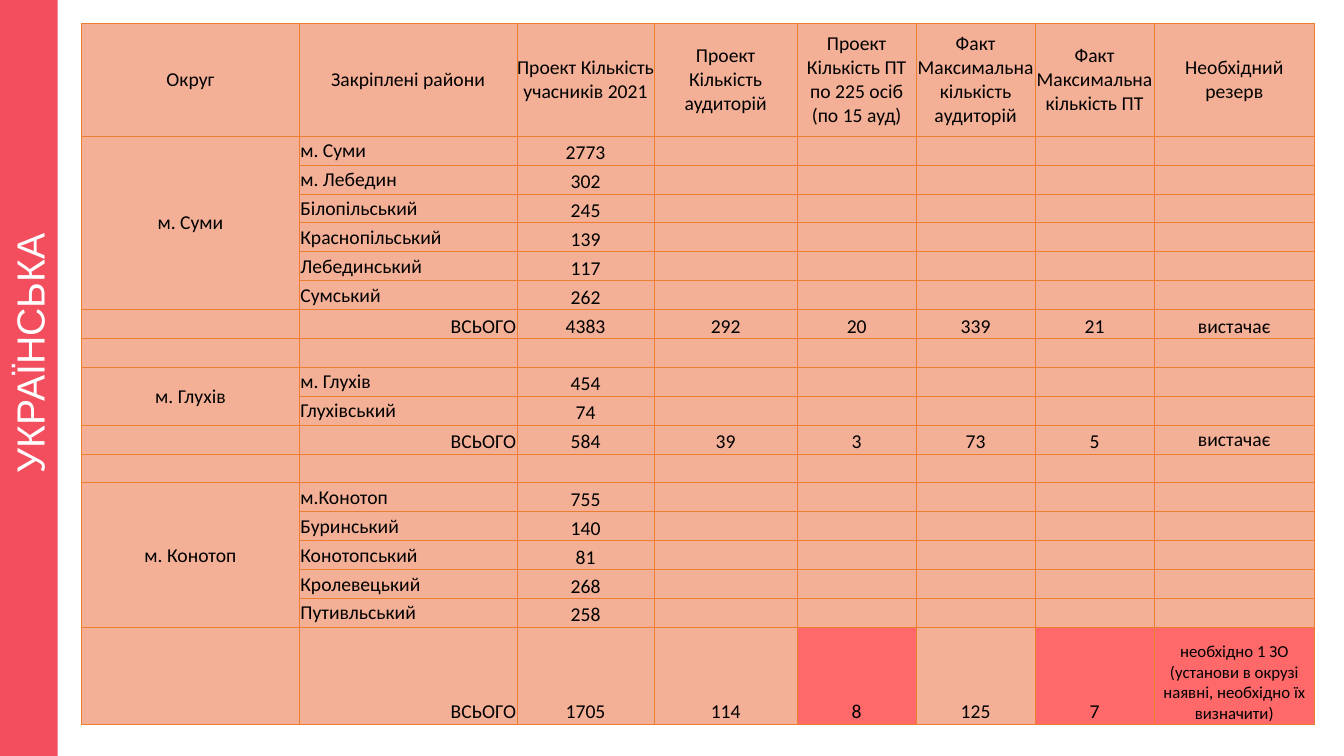
from lxml import etree
from pptx import Presentation
from pptx import util as u
from pptx.dml.color import RGBColor
from pptx.enum import shapes, text
from pptx.oxml import ns

EMU_PER_PX = 3048  # 300 px to the inch
SLIDE_W, SLIDE_H = 4000, 2250

CORAL, PEACH, ALERT, ORANGE = "F24E5E", "F4B096", "FF6969", "ED7D31"
BLACK, WHITE = "000000", "FFFFFF"

LEFT, CENTER, RIGHT = text.PP_ALIGN.LEFT, text.PP_ALIGN.CENTER, text.PP_ALIGN.RIGHT
MIDDLE, BOTTOM = text.MSO_ANCHOR.MIDDLE, text.MSO_ANCHOR.BOTTOM

COLUMN_WIDTHS = [648, 648, 408, 426, 354, 354, 354, 478]
HEADER_H, ROW_H, LAST_H = 336, 86, 288

HEADERS = [
    "Округ",
    "Закріплені райони",
    "Проект Кількість учасників 2021",
    "Проект\nКількість аудиторій",
    "Проект\nКількість ПТ\nпо 225 осіб\n(по 15 ауд)",
    "Факт\nМаксимальна кількість аудиторій",
    "Факт\nМаксимальна кількість ПТ",
    "Необхідний резерв",
]
# Each okrug: name, its districts with participants, totals, reserve
OKRUGS = [
    ("м. Суми",
     [("м. Суми", 2773), ("м. Лебедин", 302), ("Білопільський", 245),
      ("Краснопільський", 139), ("Лебединський", 117), ("Сумський", 262)],
     [4383, 292, 20, 339, 21], "вистачає"),
    ("м. Глухів",
     [("м. Глухів", 454), ("Глухівський", 74)],
     [584, 39, 3, 73, 5], "вистачає"),
    ("м. Конотоп",
     [("м.Конотоп", 755), ("Буринський", 140), ("Конотопський", 81),
      ("Кролевецький", 268), ("Путивльський", 258)],
     [1705, 114, 8, 125, 7],
     "необхідно 1 ЗО (установи в окрузі наявні, необхідно їх визначити)"),
]


def px(length):
    return u.Emu(length * EMU_PER_PX)


def rgb(color):
    return RGBColor.from_string(color)


def add_text(paragraph, words, size, font, color, align):
    paragraph.alignment = align
    run = paragraph.add_run()
    run.text = words
    run.font.size = u.Pt(size)
    run.font.name = font
    run.font.color.rgb = rgb(color)


def add_borders(cell):
    properties = cell._tc.get_or_add_tcPr()
    for side in ("a:lnL", "a:lnR", "a:lnT", "a:lnB"):
        line = etree.SubElement(properties, ns.qn(side), w=str(u.Pt(0.5)))
        fill = etree.SubElement(line, ns.qn("a:solidFill"))
        etree.SubElement(fill, ns.qn("a:srgbClr"), val=ORANGE)


def format_cell(cell, inset=3):
    """Give an empty cell its borders, fill, margins and 14 pt line height."""
    add_borders(cell)
    cell.fill.solid()
    cell.fill.fore_color.rgb = rgb(PEACH)
    cell.margin_left = cell.margin_right = cell.margin_top = px(inset)
    cell.margin_bottom = 0
    paragraph = cell.text_frame.paragraphs[0]._p
    etree.SubElement(paragraph, ns.qn("a:endParaRPr"), sz="1400")


def write_cell(cell, words, align=CENTER, anchor=BOTTOM, size=14):
    cell.vertical_anchor = anchor
    frame = cell.text_frame
    for i, line in enumerate(str(words).split("\n")):
        paragraph = frame.add_paragraph() if i else frame.paragraphs[0]
        add_text(paragraph, line, size, "Calibri", BLACK, align)


def write_okrug(table, top, okrug, districts, totals, reserve, short):
    """Fill one okrug's rows from row `top`; `short` marks a lack of reserve."""
    total_row = top + len(districts)
    table.cell(top, 0).merge(table.cell(total_row - 1, 0))
    write_cell(table.cell(top, 0), okrug, anchor=MIDDLE)
    for row, (district, participants) in enumerate(districts, top):
        write_cell(table.cell(row, 1), district, LEFT, MIDDLE)
        write_cell(table.cell(row, 2), participants)

    write_cell(table.cell(total_row, 1), "ВСЬОГО", RIGHT)
    for column, total in enumerate(totals, 2):
        write_cell(table.cell(total_row, column), total)
    write_cell(table.cell(total_row, 7), reserve,
               anchor=MIDDLE if okrug == "м. Глухів" else BOTTOM,
               size=12 if short else 14)
    if short:
        for column in (4, 6, 7):
            table.cell(total_row, column).fill.fore_color.rgb = rgb(ALERT)
    return total_row + 1


def add_okrug_table(slide, left, top):
    # districts and a total per okrug, with a blank row between okrugs
    body_rows = sum(len(districts) + 2 for _, districts, _, _ in OKRUGS) - 1
    heights = [HEADER_H] + [ROW_H] * (body_rows - 1) + [LAST_H]
    table = slide.shapes.add_table(
        len(heights), len(COLUMN_WIDTHS), px(left), px(top),
        px(sum(COLUMN_WIDTHS)), px(sum(heights))).table
    table.first_row = table.horz_banding = False
    for column, width in zip(table.columns, COLUMN_WIDTHS):
        column.width = px(width)
    for i, (row, height) in enumerate(zip(table.rows, heights)):
        row.height = px(height)
        for j, cell in enumerate(row.cells):
            format_cell(cell, inset=0 if i == 0 and j > 1 else 3)

    for column, header in enumerate(HEADERS):
        write_cell(table.cell(0, column), header, anchor=MIDDLE)
    row = 1
    for okrug in OKRUGS:
        row = write_okrug(table, row, *okrug, short=okrug is OKRUGS[-1]) + 1


def add_sidebar(slide, left, top, width, height):
    """Add the subject band, a wide bar turned to read upwards."""
    bar = slide.shapes.add_shape(
        shapes.MSO_SHAPE.RECTANGLE,
        px(left + (width - height) // 2), px(top + (height - width) // 2),
        px(height), px(width))
    bar.rotation = 270
    bar.shadow.inherit = False
    bar.fill.solid()
    bar.fill.fore_color.rgb = rgb(CORAL)
    bar.line.fill.background()
    frame = bar.text_frame
    frame.word_wrap = True
    frame.vertical_anchor = MIDDLE
    subject = frame.paragraphs[0]
    add_text(subject, "УКРАЇНСЬКА", 28, "Arial", WHITE, CENTER)
    subject._p.get_or_add_pPr().set("marL", str(px(147)))


def main():
    deck = Presentation()
    deck.slide_width, deck.slide_height = px(SLIDE_W), px(SLIDE_H)
    slide = deck.slides.add_slide(deck.slide_layouts[6])
    add_sidebar(slide, 0, 0, 172, SLIDE_H)
    add_okrug_table(slide, 243, 69)
    deck.save("out.pptx")


if __name__ == "__main__":
    main()
